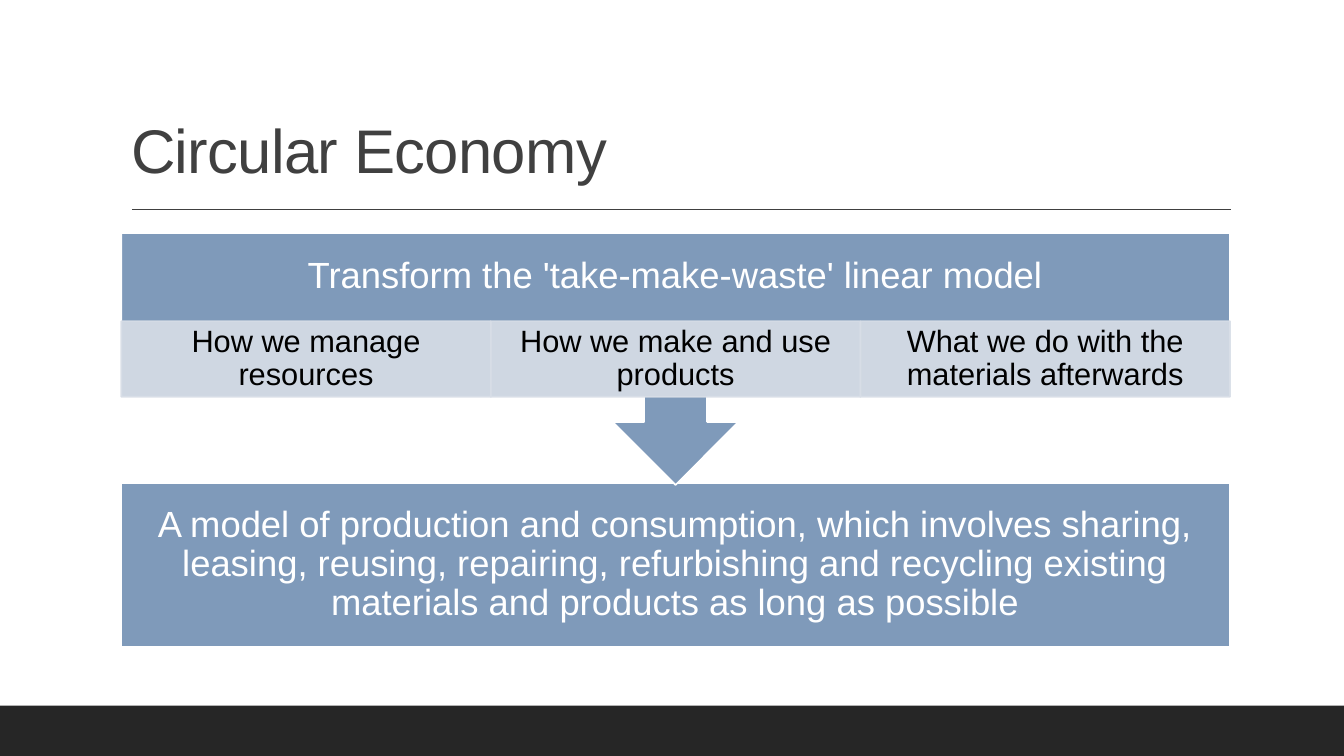
from lxml import etree
from pptx import Presentation
from pptx.dml.color import RGBColor
from pptx.enum.shapes import MSO_CONNECTOR, MSO_SHAPE
from pptx.enum.text import MSO_ANCHOR, PP_ALIGN
from pptx.oxml.ns import qn
from pptx.util import Pt

RECT = MSO_SHAPE.RECTANGLE
CALLOUT = MSO_SHAPE.DOWN_ARROW_CALLOUT
STRAIGHT = MSO_CONNECTOR.STRAIGHT
MIDDLE, BOTTOM = MSO_ANCHOR.MIDDLE, MSO_ANCHOR.BOTTOM
LEFT, CENTER = PP_ALIGN.LEFT, PP_ALIGN.CENTER

COLORS = {
    "dark": "262626",
    "gray": "404040",
    "blue": "7F9ABA",
    "pale": "D8DEE7",
    "white": "FFFFFF",
    "black": "000000",
}


class Deck:
    """Holds the style and the current slide."""

    font = "Arial"
    edge = 1.25
    pitch = 0.9

    def __init__(self, width, height):
        self.prs = Presentation()
        self.prs.slide_width, self.prs.slide_height = Pt(width), Pt(height)
        self.slide = self.prs.slides.add_slide(self.prs.slide_layouts[6])

    def paint(self, fill, color, alpha=100):
        fill.solid()
        fill.fore_color.rgb = RGBColor.from_string(COLORS[color])
        if alpha < 100:
            node = next(fill._xPr.iter(qn("a:srgbClr")))
            etree.SubElement(node, qn("a:alpha"), val=str(alpha * 1000))

    def label(self, shape, text, size, color, pads, align=CENTER,
              anchor=MIDDLE, track=0):
        frame = shape.text_frame
        frame.word_wrap = True
        frame.vertical_anchor = anchor
        (frame.margin_left, frame.margin_top,
         frame.margin_right, frame.margin_bottom) = map(Pt, pads)
        para = frame.paragraphs[0]
        para.alignment = align
        para.line_spacing = self.pitch
        run = para.add_run()
        run.text = text
        run.font.name, run.font.size = self.font, Pt(size)
        run.font.color.rgb = RGBColor.from_string(COLORS[color])
        if track:
            run._r.get_or_add_rPr().set("spc", str(int(track * 100)))

    def shape(self, kind, box, fill, line=None, alpha=100):
        shape = self.slide.shapes.add_shape(kind, *map(Pt, box))
        shape.shadow.inherit = False
        self.paint(shape.fill, fill, alpha)
        if line:
            self.paint(shape.line.fill, line, alpha)
            shape.line.width = Pt(self.edge)
        else:
            shape.line.fill.background()
        return shape

    def title(self, box, text):
        shape = self.slide.shapes.add_textbox(*map(Pt, box))
        self.label(shape, text, 44, "gray", (7.2, 3.6, 7.2, 3.6),
                   LEFT, BOTTOM, -0.5)

    def rule(self, left, right, top):
        line = self.slide.shapes.add_connector(
            STRAIGHT, Pt(left), Pt(top), Pt(right), Pt(top))
        self.paint(line.line.fill, "gray")
        line.line.width = Pt(1)
        etree.SubElement(line._element.spPr, qn("a:effectLst"))


def main():
    deck = Deck(960, 540)
    left, width = 86.6, 792

    # Footer band, title and rule
    deck.shape(RECT, (0, 504, 960, 36), "dark")
    deck.title((left, 22.3, width, 114.5), "Circular Economy")
    deck.rule(94.3, 879, 149.5)

    # Outcome
    pad = 14.4
    model = deck.shape(RECT, (left, 344.8, width, 117), "blue", "white")
    deck.label(model, "A model of production and consumption, which involves "
               "sharing, leasing, reusing, repairing, refurbishing and "
               "recycling existing materials and products as long as possible",
               26, "white", (pad, pad, pad, pad))

    # Starting point, with its text above the row of topics
    row = 54
    start = deck.shape(CALLOUT, (left, 166.4, width, 180), "blue", "white")
    deck.label(start, "Transform the 'take-make-waste' linear model",
               26, "white", (pad, pad, pad, pad + row))

    # Topics
    topics = ("How we manage resources", "How we make and use products",
              "What we do with the materials afterwards")
    step = width / len(topics)
    for i, topic in enumerate(topics):
        cell = deck.shape(RECT, (left + i * step, 229.5, step, row),
                          "pale", "pale", 90)
        deck.label(cell, topic, 22, "black", (12.2, 2, 12.2, 2))

    deck.prs.save("out.pptx")


if __name__ == "__main__":
    main()
